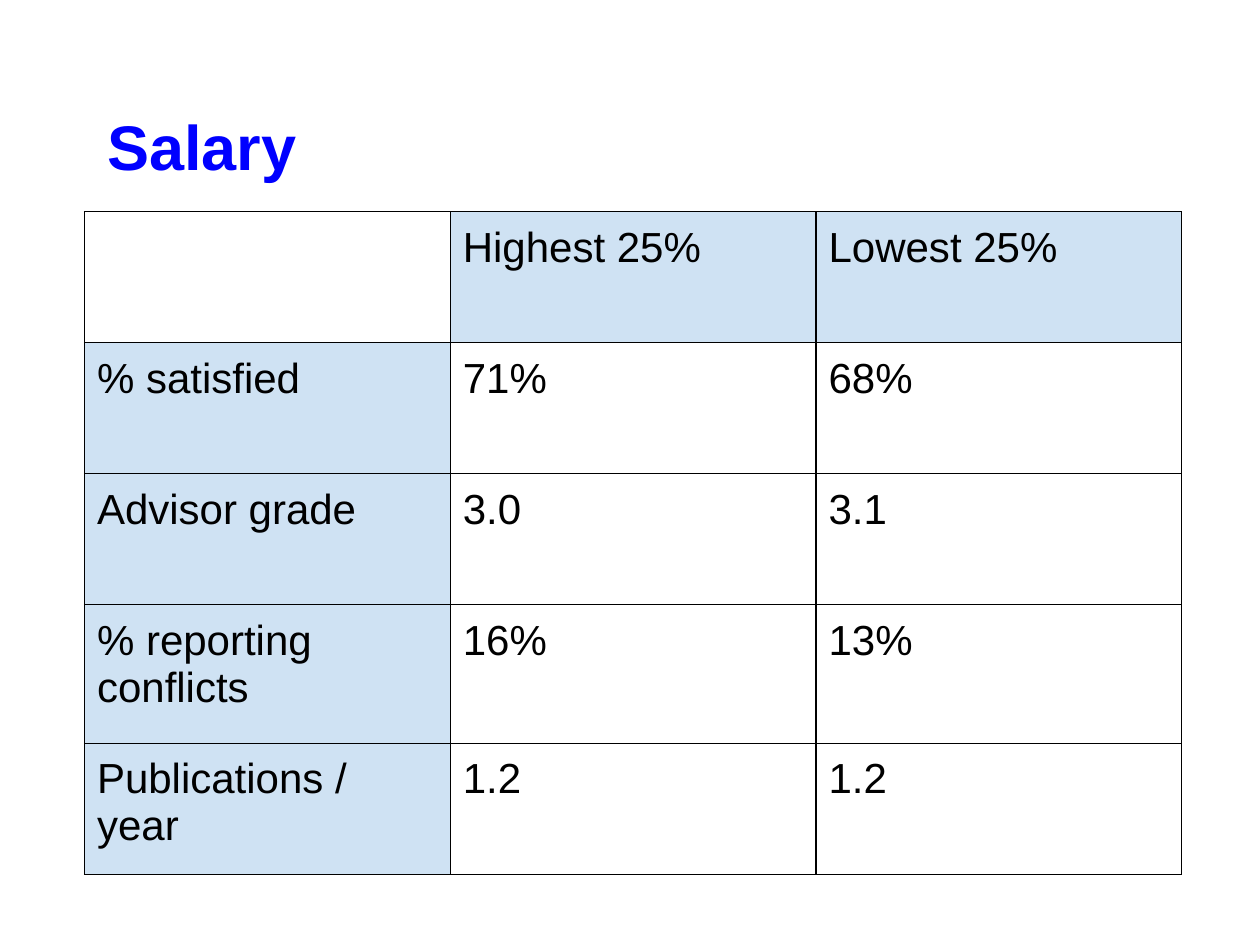
from lxml import etree
from pptx import Presentation
from pptx import util as u
from pptx.dml.color import RGBColor
from pptx.enum import text
from pptx.oxml.ns import qn

BLUE = RGBColor(0x00, 0x00, 0xFF)
BLACK = RGBColor(0x00, 0x00, 0x00)
PALE_BLUE = RGBColor(0xCF, 0xE2, 0xF3)
FONT = "Arial"
MARGIN = u.Inches(0.1)
ROWS = [
    ["", "Highest 25%", "Lowest 25%"],
    ["% satisfied", "71%", "68%"],
    ["Advisor grade", "3.0", "3.1"],
    ["% reporting conflicts", "16%", "13%"],
    ["Publications / year", "1.2", "1.2"],
]
ROW_HEIGHTS = [1.04, 1.04, 1.04, 1.1, 1.04]


def set_font(p, size, color, bold=False):
    """Apply the slide's typeface to a paragraph."""
    p.font.name, p.font.size, p.font.bold = FONT, u.Pt(size), bold
    p.font.color.rgb = color


def set_margins(box):
    """Give a text frame or cell equal margins on all sides."""
    box.margin_left = box.margin_right = MARGIN
    box.margin_top = box.margin_bottom = MARGIN


def set_borders(cell, color, width):
    """Draw a solid line on each side of a cell."""
    tc_pr = cell._tc.get_or_add_tcPr()
    for side in ("a:lnL", "a:lnR", "a:lnT", "a:lnB"):
        ln = etree.SubElement(tc_pr, qn(side), w=str(u.Pt(width)))
        fill = etree.SubElement(ln, qn("a:solidFill"))
        etree.SubElement(fill, qn("a:srgbClr"), val=str(color))


def add_title(s, words, left, top, width, height):
    """Place the title in its box, anchored at the bottom."""
    sp = s.shapes.title
    sp.left, sp.top, sp.width, sp.height = left, top, width, height
    tf = sp.text_frame
    tf.text = words
    tf.word_wrap = True
    tf.auto_size = text.MSO_AUTO_SIZE.NONE
    tf.vertical_anchor = text.MSO_ANCHOR.BOTTOM
    set_margins(tf)
    p = tf.paragraphs[0]
    p.alignment = text.PP_ALIGN.LEFT
    p._p.get_or_add_pPr().set("indent", str(u.Inches(0.25)))
    set_font(p, 36, BLUE, bold=True)


def add_salary_table(s, left, top, width, height):
    """Fill the box with the table, shading its row and column headings."""
    table = s.shapes.add_table(len(ROWS), len(ROWS[0]), left, top, width, height).table
    table.first_row = table.horz_banding = False
    for row, share in zip(table.rows, ROW_HEIGHTS):
        row.height = int(height * share / sum(ROW_HEIGHTS))
    for i, values in enumerate(ROWS):
        for j, value in enumerate(values):
            cell = table.cell(i, j)
            cell.text = value
            set_margins(cell)
            set_font(cell.text_frame.paragraphs[0], 24, BLACK)
            set_borders(cell, BLACK, 0.75)
            if (i == 0) != (j == 0):
                cell.fill.solid()
                cell.fill.fore_color.rgb = PALE_BLUE
            else:
                cell.fill.background()


def main():
    """Build the salary slide and save it."""
    prs = Presentation()
    prs.slide_width, prs.slide_height = u.Inches(10), u.Inches(7.5)
    s = prs.slides.add_slide(prs.slide_layouts[5])
    add_title(s, "Salary", u.Inches(0.5), u.Inches(0.3), u.Inches(9), u.Inches(1.25))
    add_salary_table(s, u.Inches(0.67), u.Inches(1.68), u.Inches(8.71), u.Inches(sum(ROW_HEIGHTS)))
    prs.save("out.pptx")


if __name__ == "__main__":
    main()
